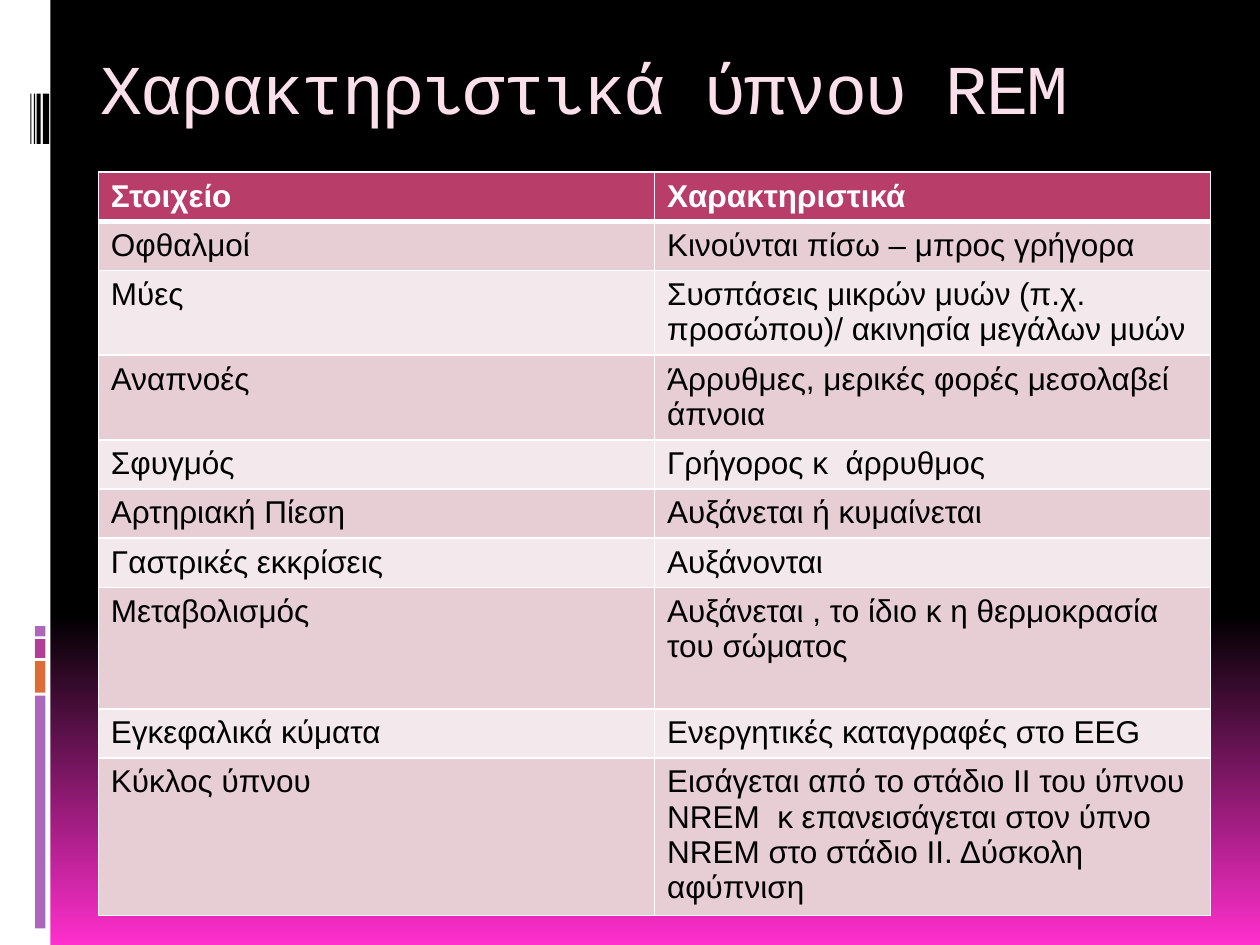
import pptx
import pptx.util
import pptx.dml.color
import pptx.enum.shapes
import pptx.enum.text
import pptx.oxml.ns
import lxml.etree

Pt = pptx.util.Pt

HUES = {
    "black": "000000", "white": "FFFFFF", "pink": "FF2FCD",
    "title": "FBE0EC", "head": "B83D68", "odd": "E6CED4", "even": "F3E8EB",
    "violet": "AC66BB", "orange": "DE6C36", "plum": "B13F9A",
}


class Deck:
    """Holds the style and the current slide."""

    def __init__(self, wide, high):
        self.prs = pptx.Presentation()
        self.prs.slide_width, self.prs.slide_height = Pt(wide), Pt(high)
        self.slide = self.prs.slides.add_slide(self.prs.slide_layouts[5])

    def hue(self, name):
        return pptx.dml.color.RGBColor.from_string(HUES[name])

    def font(self, para, face, size, hue, bold=False):
        for run in para.runs:
            run.font.name, run.font.size, run.font.bold = face, Pt(size), bold
            run.font.color.rgb = self.hue(hue)

    def back(self, start, top, end):
        fill = self.slide.background.fill
        fill.gradient()
        fill.gradient_angle = 270
        for stop, place, name in zip(fill.gradient_stops, (start, 1), (top, end)):
            stop.position = place
            stop.color.rgb = self.hue(name)

    def bar(self, left, top, wide, high, hue):
        rect = pptx.enum.shapes.MSO_SHAPE.RECTANGLE
        box = self.slide.shapes.add_shape(rect, Pt(left), Pt(top), Pt(wide), Pt(high))
        box.shadow.inherit = False
        box.fill.solid()
        box.fill.fore_color.rgb = self.hue(hue)
        box.line.fill.background()

    def title(self, text, left, top, wide, high):
        box = self.slide.shapes.title
        box.left, box.top, box.width, box.height = map(Pt, (left, top, wide, high))
        frame = box.text_frame
        frame.text = text
        frame.auto_size = pptx.enum.text.MSO_AUTO_SIZE.NONE
        frame.vertical_anchor = pptx.enum.text.MSO_ANCHOR.MIDDLE
        para = frame.paragraphs[0]
        para.alignment = pptx.enum.text.PP_ALIGN.LEFT
        para.line_spacing = 0.9
        self.font(para, "Courier New", 40, "title")
        para.runs[0].font._element.set("spc", "-100")

    def edges(self, cell, low):
        """White borders; low is the width of the bottom one."""
        qn = pptx.oxml.ns.qn
        props = cell._tc.get_or_add_tcPr()
        for side, width in (("L", 1), ("R", 1), ("T", 1), ("B", low)):
            line = lxml.etree.SubElement(props, qn("a:ln" + side), w=str(Pt(width)))
            fill = lxml.etree.SubElement(line, qn("a:solidFill"))
            lxml.etree.SubElement(fill, qn("a:srgbClr"), val=HUES["white"])

    def table(self, rows, left, top, wide, highs):
        grid = self.slide.shapes.add_table(
            len(rows), len(rows[0]), Pt(left), Pt(top), Pt(wide), Pt(sum(highs))).table
        for r, (row, high) in enumerate(zip(rows, highs)):
            grid.rows[r].height = Pt(high)
            head = r == 0
            for c, text in enumerate(row):
                cell = grid.cell(r, c)
                cell.text_frame.text = text
                self.font(cell.text_frame.paragraphs[0], "Arial", 18,
                          "white" if head else "black", head)
                # Borders must come before the fill; a thick rule parts the head
                self.edges(cell, 3 if head else 1)
                cell.fill.solid()
                cell.fill.fore_color.rgb = self.hue(
                    "head" if head else "odd" if r % 2 else "even")


ROWS = [
    ("Στοιχείο", "Χαρακτηριστικά"),
    ("Οφθαλμοί", "Κινούνται πίσω – μπρος γρήγορα"),
    ("Μύες", "Συσπάσεις μικρών μυών (π.χ. προσώπου)/ ακινησία μεγάλων μυών"),
    ("Αναπνοές", "Άρρυθμες, μερικές φορές μεσολαβεί άπνοια"),
    ("Σφυγμός", "Γρήγορος κ  άρρυθμος"),
    ("Αρτηριακή Πίεση", "Αυξάνεται ή κυμαίνεται"),
    ("Γαστρικές εκκρίσεις", "Αυξάνονται"),
    ("Μεταβολισμός", "Αυξάνεται , το ίδιο κ η θερμοκρασία του σώματος"),
    ("Εγκεφαλικά κύματα", "Ενεργητικές καταγραφές στο EEG"),
    ("Κύκλος ύπνου", "Εισάγεται από το στάδιο ΙΙ του ύπνου NREM  κ επανεισάγεται "
                     "στον ύπνο NREM στο στάδιο ΙΙ. Δύσκολη αφύπνιση"),
]
# Row heights by the number of text lines
LINES = [1, 1, 2, 2, 1, 1, 1, 3, 1, 4]
HIGH = {1: 28.1, 2: 48.4, 3: 69.4, 4: 90}


def main():
    deck = Deck(720, 540)
    deck.back(0.65, "black", "pink")

    # Side strip with coloured blocks and black stripes
    deck.bar(0, 0, 28.8, 540, "white")
    for top, high, hue in ((397.6, 133, "violet"), (377.8, 18, "orange"),
                           (365.2, 10.8, "plum"), (357.8, 5.8, "violet")):
        deck.bar(20.1, top, 5.8, high, hue)
    for left, wide in ((24.5, 3.6), (21, 2.2), (19.4, 0.7), (17.3, 0.7)):
        deck.bar(left, 53.5, wide, 28.8, "black")

    # Title and table
    deck.title("Χαρακτηριστικά ύπνου REM", 50.4, 16.6, 612, 72)
    deck.table(ROWS, 56.2, 98.4, 635.6, [HIGH[n] for n in LINES])
    deck.prs.save("out.pptx")


if __name__ == "__main__":
    main()
